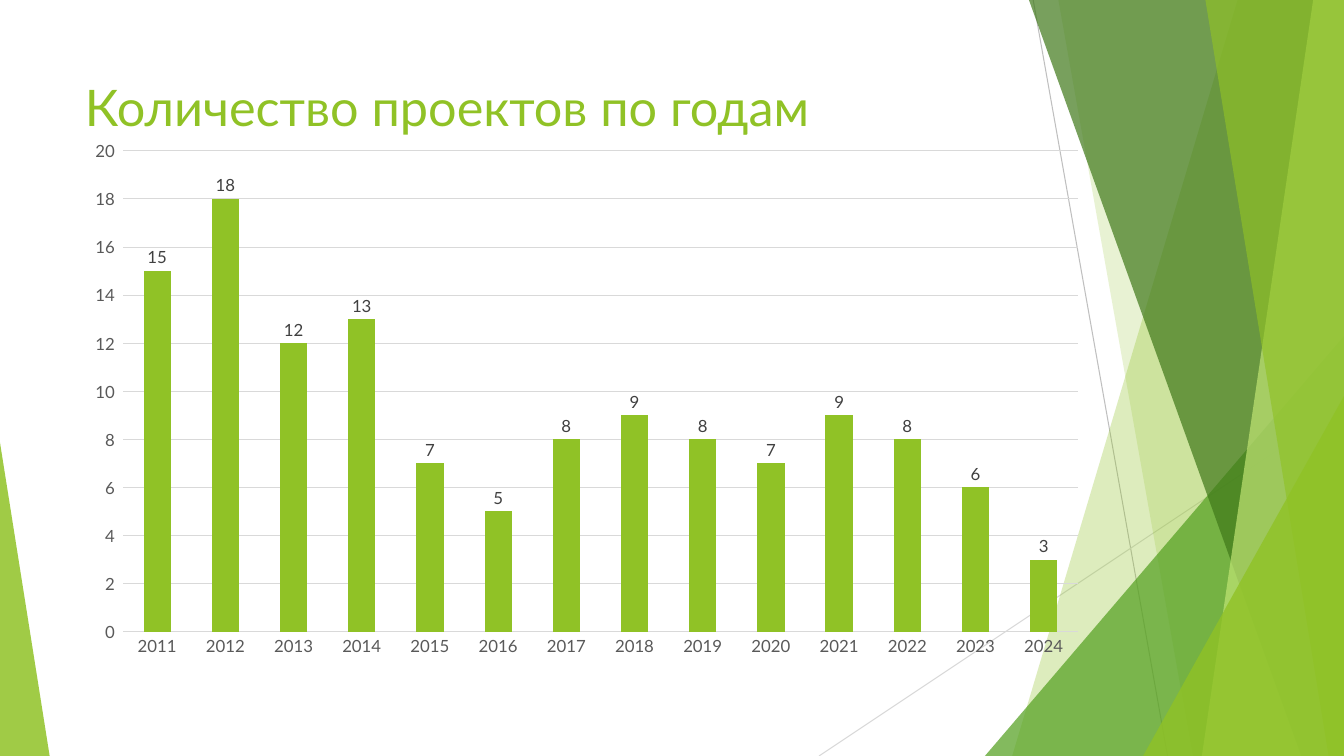
from collections import namedtuple
from dataclasses import dataclass

from lxml import etree
from pptx import Presentation
from pptx.chart import data as cd
from pptx.dml import color as dc
from pptx.enum import chart as ch, shapes as sh, text as tx
from pptx.oxml import ns
from pptx.util import Pt

Box = namedtuple("Box", "left top width height")


@dataclass(frozen=True)
class Theme:
    font: str = "Lato"
    lime: str = "90C226"
    green: str = "54A021"
    forest: str = "3F7819"
    pale: str = "C0E474"
    axis_text: str = "595959"
    label_text: str = "404040"
    grid: str = "D9D9D9"
    ray: str = "BFBFBF"
    title_size: float = 36
    chart_size: float = 12
    hairline: float = 0.75


THEME = Theme()


def rgb(value):
    return dc.RGBColor.from_string(value)


def style_font(font, size, color):
    font.name = THEME.font
    font.size = Pt(size)
    font.bold = False
    font.color.rgb = rgb(color)


def style_line(line, color):
    line.color.rgb = rgb(color)
    line.width = Pt(THEME.hairline)


def tint(facet, color, opacity):
    facet.shadow.inherit = False
    facet.fill.solid()
    facet.fill.fore_color.rgb = rgb(color)
    for shade in facet.element.iter(ns.qn("a:srgbClr")):
        etree.SubElement(shade, ns.qn("a:alpha"), val=str(opacity * 1000))
    facet.line.fill.background()


def add_ray(slide, start, end, color):
    ray = slide.shapes.add_connector(
        sh.MSO_CONNECTOR.STRAIGHT, *map(Pt, start + end))
    style_line(ray.line, color)
    etree.SubElement(ray.element.spPr, ns.qn("a:effectLst"))


def add_band(slide, box, top_left, top_right, bottom_left, color, opacity):
    right, bottom = box.left + box.width, box.top + box.height
    outline = slide.shapes.build_freeform(Pt(box.left + top_left), Pt(box.top))
    corners = [(box.left + top_right, box.top), (right, bottom),
               (box.left + bottom_left, bottom)]
    outline.add_line_segments([(Pt(x), Pt(y)) for x, y in corners])
    tint(outline.convert_to_shape(), color, opacity)


def add_wedge(slide, box, apex, color, opacity):
    wedge = slide.shapes.add_shape(
        sh.MSO_SHAPE.ISOSCELES_TRIANGLE, *map(Pt, box))
    wedge.adjustments[0] = apex
    tint(wedge, color, opacity)


def add_right_facets(slide, box):
    left, top, width, height = box
    right, bottom = left + width, top + height

    def corner_wedge(wedge_width, wedge_height, color, opacity):
        add_wedge(slide, Box(right - wedge_width, bottom - wedge_height,
                             wedge_width, wedge_height), 1, color, opacity)

    add_ray(slide, (left + 153, top), (left + 249, bottom), THEME.ray)
    add_ray(slide, (right, top + 290), (left, bottom), THEME.grid)
    add_band(slide, box, 299, width, 138, THEME.lime, 30)
    add_band(slide, box, 171, width, 267, THEME.lime, 20)
    corner_wedge(256.5, 300, THEME.green, 72)
    add_band(slide, box, 150, width, 344.5, THEME.forest, 70)
    add_band(slide, box, 353, width, 273.5, THEME.pale, 70)
    add_band(slide, box, 276, width, 364, THEME.lime, 65)
    corner_wedge(143.5, 257, THEME.lime, 80)


def add_title(slide, box, wording):
    title = slide.shapes.title
    title.left, title.top, title.width, title.height = map(Pt, box)
    slide.shapes.element.append(title.element)
    frame = title.text_frame
    frame.text = wording
    frame.word_wrap = True
    frame.auto_size = tx.MSO_AUTO_SIZE.NONE
    frame.vertical_anchor = tx.MSO_ANCHOR.MIDDLE
    heading = frame.paragraphs[0]
    heading.alignment = tx.PP_ALIGN.LEFT
    style_font(heading.font, THEME.title_size, THEME.lime)


def add_projects_chart(slide, box, first_year, counts):
    projects = cd.CategoryChartData()
    projects.categories = [str(first_year + i) for i in range(len(counts))]
    projects.add_series("Количество проектов", counts)
    chart = slide.shapes.add_chart(
        ch.XL_CHART_TYPE.COLUMN_CLUSTERED, *map(Pt, box), projects).chart
    chart.has_title = False
    chart.has_legend = False
    style_font(chart.font, THEME.chart_size, THEME.axis_text)

    years, scale = chart.category_axis, chart.value_axis
    for axis in (years, scale):
        axis.major_tick_mark = axis.minor_tick_mark = ch.XL_TICK_MARK.NONE
        style_font(axis.tick_labels.font, THEME.chart_size, THEME.axis_text)
    style_line(years.format.line, THEME.grid)
    scale.minimum_scale, scale.maximum_scale, scale.major_unit = 0, 20, 2
    scale.tick_labels.number_format = r"#,##0_);[Red]\(#,##0\)"
    scale.tick_labels.number_format_is_linked = False
    scale.format.line.fill.background()
    style_line(scale.major_gridlines.format.line, THEME.grid)

    plot = chart.plots[0]
    plot.gap_width = 150
    plot.vary_by_categories = False
    columns = plot.series[0]
    columns.invert_if_negative = False
    columns.format.fill.solid()
    columns.format.fill.fore_color.rgb = rgb(THEME.lime)
    labels = columns.data_labels
    labels.show_value = True
    labels.position = ch.XL_LABEL_POSITION.OUTSIDE_END
    style_font(labels.font, THEME.chart_size, THEME.label_text)


def main():
    deck = Presentation()
    deck.slide_width, deck.slide_height = Pt(960), Pt(540)
    slide = deck.slides.add_slide(deck.slide_layouts[5])
    add_right_facets(slide, Box(585, 0, 375, 540))
    add_wedge(slide, Box(0, 316, 35.5, 224), 0, THEME.lime, 85)
    add_title(slide, Box(53.5, 48, 677, 55.5), "Количество проектов по годам")
    add_projects_chart(slide, Box(53.5, 93, 731, 383), 2011,
                       [15, 18, 12, 13, 7, 5, 8, 9, 8, 7, 9, 8, 6, 3])
    deck.save("out.pptx")


if __name__ == "__main__":
    main()
